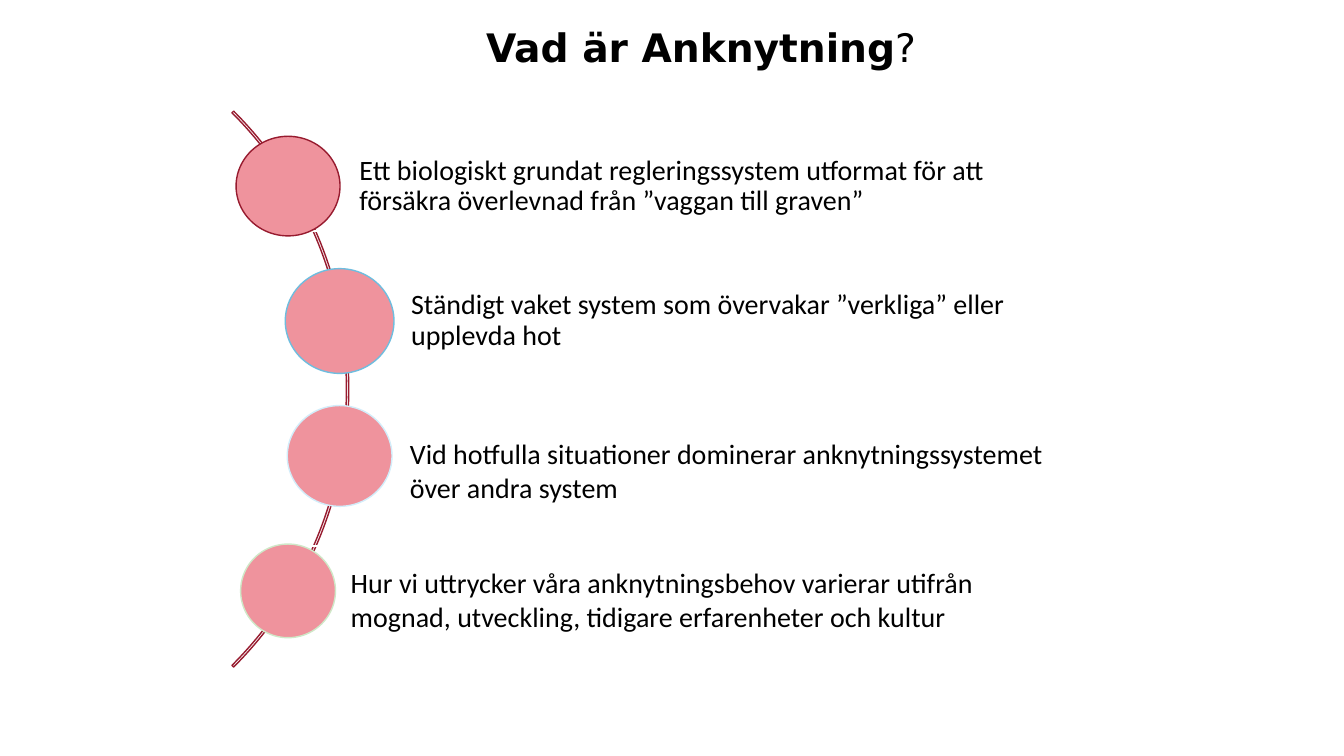
from pptx import Presentation
from pptx.dml.color import RGBColor
from pptx.enum.shapes import MSO_SHAPE as SHAPE
from pptx.enum.text import MSO_ANCHOR as ANCHOR, PP_ALIGN as ALIGN
from pptx.util import Cm, Pt

TITLE = [("Vad är Anknytning", True), ("?", False)]
TITLE_BOX = (8.33, 0.46, 18.67, 1.45)
WIDE, TIGHT = (1.8, 0.15), (0.25, 0.13)
ROWS = [
    dict(text="Ett biologiskt grundat regleringssystem utformat för att försäkra överlevnad från ”vaggan till graven”",
         left=7.26, circle=(2.62, 2.51), line="971B2F",
         box=(7.26, 3.56, 19.82, 2.26), insets=WIDE, anchor=ANCHOR.MIDDLE, spacing=0.9),
    dict(text="Ständigt vaket system som övervakar ”verkliga” eller upplevda hot",
         left=8.56, circle=(2.74, 2.64), line="6EBDDF",
         box=(8.56, 6.96, 18.52, 2.26), insets=WIDE, anchor=ANCHOR.MIDDLE, spacing=0.9),
    dict(text="Vid hotfulla situationer dominerar anknytningssystemet över andra system",
         left=8.56, circle=(2.64, 2.54), line="D2EDFA",
         box=(10.08, 10.87, 16.94, 1.96), insets=TIGHT, anchor=ANCHOR.TOP, spacing=1.0),
    dict(text="Hur vi uttrycker våra anknytningsbehov varierar utifrån mognad, utveckling, tidigare erfarenheter och kultur",
         left=7.26, circle=(2.39, 2.36), line="CFE8C8",
         box=(8.59, 14.12, 18.44, 1.96), insets=TIGHT, anchor=ANCHOR.TOP, spacing=1.0),
]
ARC_BOX, ARC_ADJ = (-11.02, -0.1, 19.81, 19.81), (189, 27, 0.003)
BAR_TOP, BAR_STEP, BAR_RIGHT, BAR_H = 3.56, 3.4, 27.08, 2.26


def color(value):
    return RGBColor.from_string(value)


def add_shape(s, kind, box, line, fill=None):
    sp = s.shapes.add_shape(kind, *map(Cm, box))
    sp.shadow.inherit = False
    if fill:
        sp.fill.solid()
        sp.fill.fore_color.rgb = color(fill)
    else:
        sp.fill.background()
    sp.line.color.rgb = color(line)
    sp.line.width = Pt(1)
    return sp


def add_text(s, box, runs, insets, font, anchor=ANCHOR.TOP, **para):
    tf = s.shapes.add_textbox(*map(Cm, box)).text_frame
    side, edge = insets
    frame = dict(word_wrap=True, vertical_anchor=anchor, margin_left=Cm(side),
                 margin_right=Cm(min(side, 0.25)), margin_top=Cm(edge), margin_bottom=Cm(edge))
    for name, value in frame.items():
        setattr(tf, name, value)
    p = tf.paragraphs[0]
    for name, value in para.items():
        setattr(p, name, value)
    for text, bold in runs:
        r = p.add_run()
        r.text = text
        for name, value in dict(font, bold=bold).items():
            setattr(r.font, name, value)
        r.font.color.rgb = color("000000")


def main():
    prs = Presentation()
    prs.slide_width, prs.slide_height = Cm(33.87), Cm(19.05)
    s = prs.slides.add_slide(prs.slide_layouts[6])

    arc = add_shape(s, SHAPE.BLOCK_ARC, ARC_BOX, "971B2F")
    for i, value in enumerate(ARC_ADJ):
        arc.adjustments[i] = value

    for i, row in enumerate(ROWS):
        left, top = row["left"], BAR_TOP + i * BAR_STEP
        add_shape(s, SHAPE.RECTANGLE, (left, top, BAR_RIGHT - left, BAR_H), "FFFFFF")
        w, h = row["circle"]
        add_shape(s, SHAPE.OVAL, (left - w / 2, top + (BAR_H - h) / 2, w, h), row["line"], "EF939D")
        add_text(s, row["box"], [(row["text"], False)], row["insets"],
                 dict(name="Calibri", size=Pt(20)), row["anchor"], line_spacing=row["spacing"])

    add_text(s, TITLE_BOX, TITLE, TIGHT, dict(name="DejaVu Sans", size=Pt(28)), alignment=ALIGN.CENTER)
    prs.save("out.pptx")


if __name__ == "__main__":
    main()
